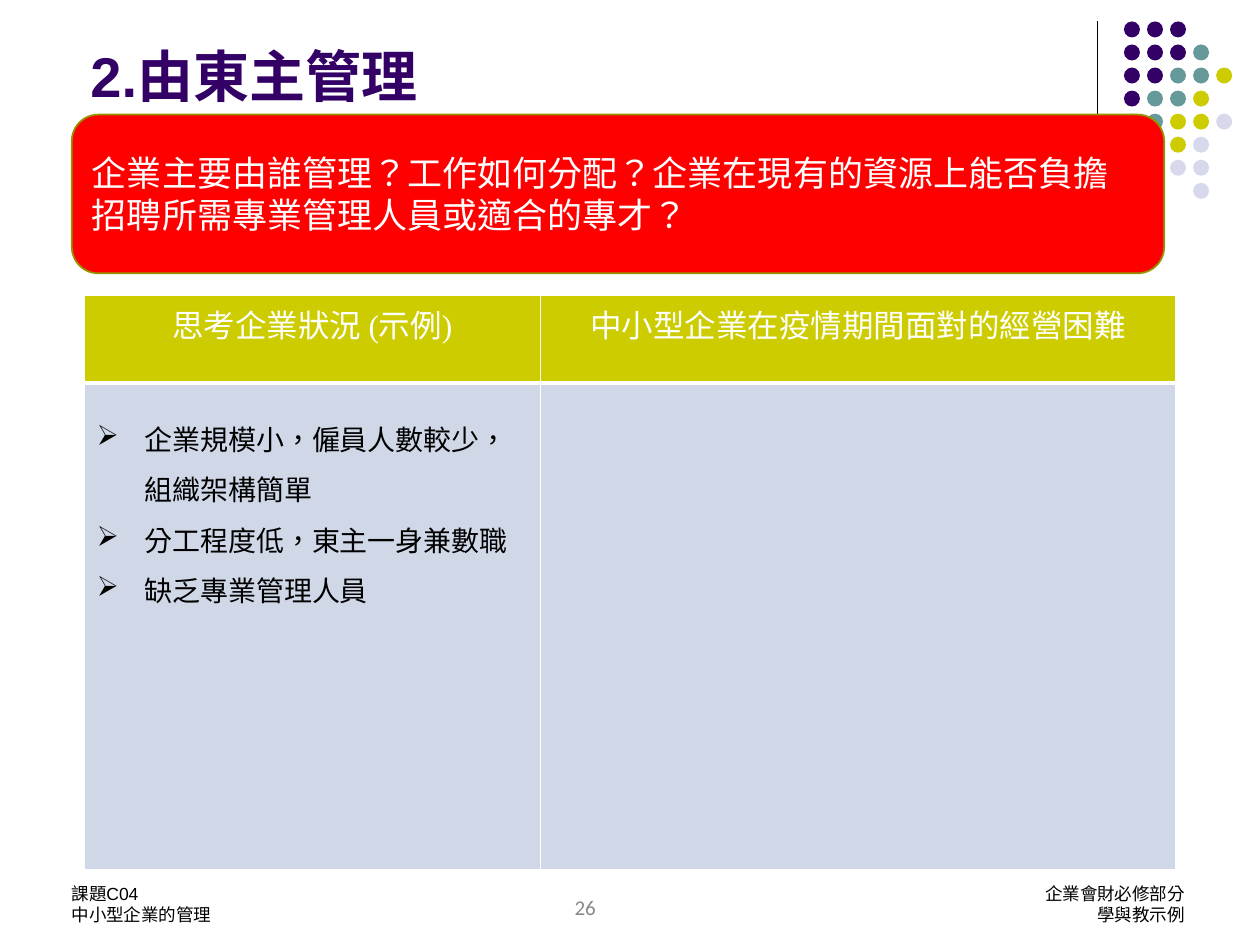
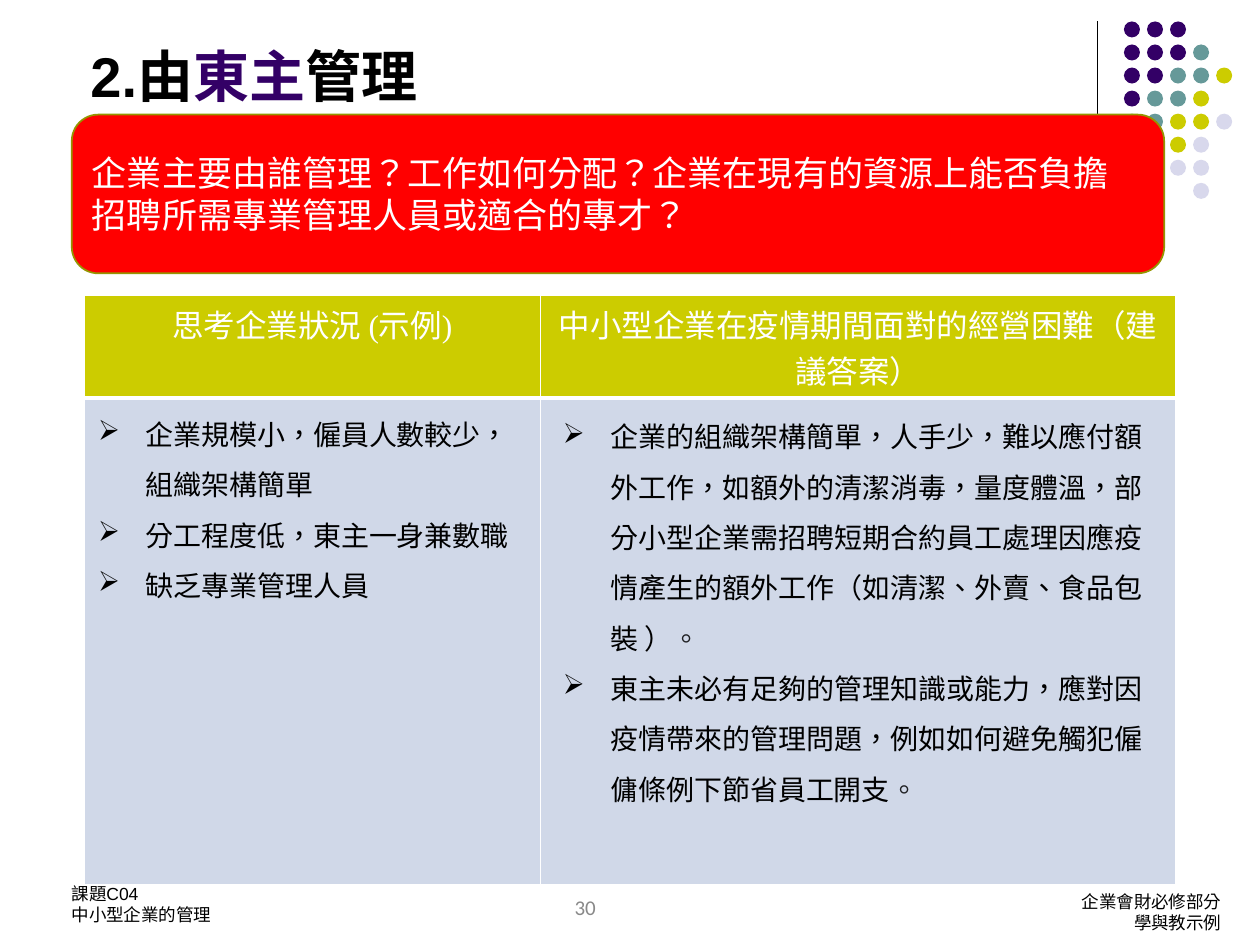
from dataclasses import dataclass
from typing import Optional, Sequence

from lxml.etree import SubElement
from pptx import Presentation
from pptx.dml.color import RGBColor as Rgb
from pptx.enum.shapes import MSO_CONNECTOR as Connector
from pptx.enum.shapes import MSO_SHAPE as Shape
from pptx.enum.text import MSO_ANCHOR as Anchor
from pptx.enum.text import PP_ALIGN as Align
from pptx.oxml import parse_xml
from pptx.oxml.ns import nsdecls, qn
from pptx.util import Inches, Pt

# Grid: 100 columns by 75 rows on a 10 x 7.5 inch slide
WIDTH, HEIGHT = Inches(10), Inches(7.5)
COLUMNS, ROWS = 100, 75


@dataclass(frozen=True)
class Theme:
    purple: str = "330066"
    teal: str = "669999"
    lime: str = "CCCC00"
    mist: str = "D8D8EC"
    banner: str = "FF0000"
    banner_line: str = "959500"
    body_fill: str = "D0D8E8"
    white: str = "FFFFFF"
    black: str = "000000"
    gray: str = "898989"
    ink: str = "202124"
    sans: str = "Arial"
    serif: str = "Times New Roman"
    number_font: str = "Calibri"
    stop_font: str = "Roboto"
    bullet_font: str = "Wingdings"
    title_size: float = 32
    banner_size: float = 20
    header_size: float = 18
    body_size: float = 16
    number_size: float = 12
    footer_size: float = 10


THEME = Theme()


@dataclass(frozen=True)
class Area:
    column: float
    row: float
    columns: float
    rows: float

    def lengths(self) -> tuple[int, int, int, int]:
        return (across(self.column), down(self.row),
                across(self.columns), down(self.rows))


@dataclass(frozen=True)
class Span:
    text: str
    color: str = THEME.black
    font: str = THEME.serif


@dataclass(frozen=True)
class TextStyle:
    size: float
    bold: bool = False
    align: Optional[Align] = None
    spacing: Optional[float] = None
    indent: float = 0
    bullet: str = ""


@dataclass(frozen=True)
class BulletList:
    area: Area
    style: TextStyle
    items: Sequence[Sequence[Span]]


@dataclass(frozen=True)
class Page:
    title: Sequence[Span]
    difficulty_header: str
    header_rows: float
    lists: Sequence[BulletList]
    number: str
    course_area: Area


def across(columns: float) -> int:
    return round(WIDTH * columns / COLUMNS)


def down(rows: float) -> int:
    return round(HEIGHT * rows / ROWS)


# Text styles; Ø is the arrowhead of the bullet font
ARROW = "Ø"
TITLE = TextStyle(THEME.title_size, bold=True, spacing=0.9, indent=5.5)
BANNER = TextStyle(THEME.banner_size)
HEADER = TextStyle(THEME.header_size, align=Align.CENTER)
BULLETS = TextStyle(THEME.body_size, spacing=1.5, indent=3.8, bullet=ARROW)
ANSWERS = TextStyle(THEME.body_size, align=Align.JUSTIFY, spacing=1.5,
                    indent=3.8, bullet=ARROW)
NUMBER = TextStyle(THEME.number_size, align=Align.CENTER)
TOPIC = TextStyle(THEME.footer_size)
COURSE = TextStyle(THEME.footer_size, align=Align.RIGHT)

# Shared places
TITLE_AREA = Area(0.7, -1.8, 90, 11)
BANNER_AREA = Area(5.7, 9.1, 86.7, 12.6)
BANNER_RIGHT_MARGIN = 2
TABLE_LEFT, TABLE_TOP = 6.7, 23.4
TABLE_COLUMNS, BODY_ROWS = (36.2, 50.4), 38.6
NUMBER_AREA = Area(34.8, 70.5, 23.3, 5)
TOPIC_AREA = Area(4.7, 68, 23.3, 5)
FOOTER_DROP = 2.1

# Dot cluster: one letter for each dot
DOT_ROWS = ("PPP", "PPPT", "PPTTY", "PTTY", "TTYYL", " YYL", " YLL", " L L")
DOT_COLORS = {"P": THEME.purple, "T": THEME.teal,
              "Y": THEME.lime, "L": THEME.mist}
DOT_LEFT, DOT_TOP, DOT_PITCH, DOT_SIZE = 89.2, 1.7, 1.83, 1.27

# Shared wording
QUESTION = ("企業主要由誰管理？工作如何分配？企業在現有的資源上能否負擔"
            "招聘所需專業管理人員或適合的專才？")
SITUATION_HEADER = "思考企業狀況 (示例)"
DIFFICULTY_HEADER = "中小型企業在疫情期間面對的經營困難"
TOPIC_LINES = ("課題C04", "中小型企業的管理")
COURSE_LINES = ("企業會財必修部分", "學與教示例")
SITUATIONS = ("企業規模小，僱員人數較少，組織架構簡單",
              "分工程度低，東主一身兼數職", "缺乏專業管理人員")
DIFFICULTIES = (
    "企業的組織架構簡單，人手少，難以應付額外工作，如額外的清潔消毒，量度體溫，"
    "部分小型企業需招聘短期合約員工處理因應疫情產生的額外工作"
    "（如清潔、外賣、食品包裝 ）",
    "東主未必有足夠的管理知識或能力，應對因疫情帶來的管理問題，"
    "例如如何避免觸犯僱傭條例下節省員工開支")


def lines(texts: Sequence[str], color: str = THEME.black,
          font: str = THEME.serif) -> list[list[Span]]:
    return [[Span(text, color, font)] for text in texts]


def title_span(text: str, color: str = THEME.black) -> Span:
    return Span(text, color, THEME.sans)


def situations(column: float, row: float) -> BulletList:
    return BulletList(Area(column, row, 35.2, 17.2), BULLETS, lines(SITUATIONS))


PAGES = (
    Page([title_span("2.由東主管理", THEME.purple)], DIFFICULTY_HEADER, 7,
         [situations(6.7, 31.7)], "26", Area(57.9, 68, 37.1, 5)),
    Page([title_span("2.由"), title_span("東主", THEME.purple),
          title_span("管理")],
         DIFFICULTY_HEADER + "（建議答案）", 8.2,
         [situations(6.8, 31.3),
          BulletList(Area(43.7, 31.5, 48, 36), ANSWERS,
                     [[Span(text, font=THEME.sans),
                       Span("。", THEME.ink, THEME.stop_font)]
                      for text in DIFFICULTIES])],
         "30", Area(60.8, 68.6, 37.1, 5)),
)


# Text helpers
def add_bullet(para, style: TextStyle) -> None:
    props = para._p.get_or_add_pPr()
    props.set("indent", str(-across(style.indent)))
    color = SubElement(props, qn("a:buClr"))
    SubElement(color, qn("a:srgbClr"), val=THEME.black)
    SubElement(props, qn("a:buFont"), typeface=THEME.bullet_font,
               pitchFamily="2", charset="2")
    SubElement(props, qn("a:buChar"), char=style.bullet)


def write(frame, paragraphs: Sequence[Sequence[Span]], style: TextStyle) -> None:
    frame.word_wrap = True
    for index, spans in enumerate(paragraphs):
        para = frame.add_paragraph() if index else frame.paragraphs[0]
        para.alignment = style.align or Align.LEFT
        para.line_spacing = style.spacing
        if style.indent:
            props = para._p.get_or_add_pPr()
            props.set("marL", str(across(style.indent)))
            props.set("indent", "0")
        if style.bullet:
            add_bullet(para, style)
        for span in spans:
            run = para.add_run()
            run.text = span.text
            run.font.size, run.font.bold = Pt(style.size), style.bold
            run.font.name = span.font
            run.font.color.rgb = Rgb.from_string(span.color)
            run._r.get_or_add_rPr().set("lang", "zh-TW")


def add_text(slide, area: Area, paragraphs: Sequence[Sequence[Span]],
             style: TextStyle, anchor: Anchor = Anchor.TOP,
             drop: float = 0) -> None:
    box = slide.shapes.add_textbox(*area.lengths())
    box.text_frame.vertical_anchor = anchor
    if drop:
        box.text_frame.margin_top = down(drop)
    write(box.text_frame, paragraphs, style)


# Shape helpers
def add_filled(slide, kind: Shape, area: Area, color: str):
    shape = slide.shapes.add_shape(kind, *area.lengths())
    shape.shadow.inherit = False
    shape.fill.solid()
    shape.fill.fore_color.rgb = Rgb.from_string(color)
    shape.line.fill.background()
    return shape


def add_corner(slide) -> None:
    rule = slide.shapes.add_connector(Connector.STRAIGHT, across(87.1), down(1.7),
                                      across(87.1), down(18.3))
    rule.line.color.rgb = Rgb.from_string(THEME.black)
    rule.line.width = Pt(0.75)
    SubElement(rule._element.spPr, qn("a:effectLst"))
    for row, letters in enumerate(DOT_ROWS):
        for column, letter in enumerate(letters):
            if letter in DOT_COLORS:
                area = Area(DOT_LEFT + column * DOT_PITCH,
                            DOT_TOP + row * DOT_PITCH, DOT_SIZE, DOT_SIZE)
                add_filled(slide, Shape.OVAL, area, DOT_COLORS[letter])


def add_banner(slide) -> None:
    banner = add_filled(slide, Shape.ROUNDED_RECTANGLE, BANNER_AREA, THEME.banner)
    banner.line.color.rgb = Rgb.from_string(THEME.banner_line)
    banner.line.width = Pt(1)
    banner.text_frame.vertical_anchor = Anchor.MIDDLE
    banner.text_frame.margin_right = across(BANNER_RIGHT_MARGIN)
    write(banner.text_frame, lines([QUESTION], THEME.white), BANNER)


# Table
def style_cell(cell, color: str, top: float, bottom: float) -> None:
    cell.fill.solid()
    cell.fill.fore_color.rgb = Rgb.from_string(color)
    props = cell._tc.get_or_add_tcPr()
    sides = (("L", 1), ("R", 1), ("T", top), ("B", bottom))
    for index, (side, width) in enumerate(sides):
        props.insert(index, parse_xml(
            f'<a:ln{side} {nsdecls("a")} w="{Pt(width)}"><a:solidFill>'
            f'<a:srgbClr val="{THEME.white}"/></a:solidFill></a:ln{side}>'))


def add_grid(slide, headers: Sequence[str], header_rows: float) -> None:
    heights = (header_rows, BODY_ROWS)
    area = Area(TABLE_LEFT, TABLE_TOP, sum(TABLE_COLUMNS), sum(heights))
    table = slide.shapes.add_table(2, 2, *area.lengths()).table
    table.horz_banding = False
    for index, header in enumerate(headers):
        table.columns[index].width = across(TABLE_COLUMNS[index])
        table.rows[index].height = down(heights[index])
        style_cell(table.cell(0, index), THEME.lime, 1, 3)
        style_cell(table.cell(1, index), THEME.body_fill, 3, 1)
        write(table.cell(0, index).text_frame, lines([header], THEME.white), HEADER)


def add_page(deck, page: Page) -> None:
    slide = deck.slides.add_slide(deck.slide_layouts[6])
    add_corner(slide)
    add_text(slide, TITLE_AREA, [page.title], TITLE, Anchor.BOTTOM)
    add_banner(slide)
    add_grid(slide, (SITUATION_HEADER, page.difficulty_header), page.header_rows)
    for bullets in page.lists:
        add_text(slide, bullets.area, bullets.items, bullets.style)
    # Footer
    add_text(slide, NUMBER_AREA,
             lines([page.number], THEME.gray, THEME.number_font), NUMBER)
    add_text(slide, page.course_area, lines(COURSE_LINES, font=THEME.sans),
             COURSE, drop=FOOTER_DROP)
    add_text(slide, TOPIC_AREA, lines(TOPIC_LINES, font=THEME.sans),
             TOPIC, drop=FOOTER_DROP)


def main() -> None:
    deck = Presentation()
    deck.slide_width, deck.slide_height = WIDTH, HEIGHT
    for page in PAGES:
        add_page(deck, page)
    deck.save("out.pptx")


if __name__ == "__main__":
    main()
